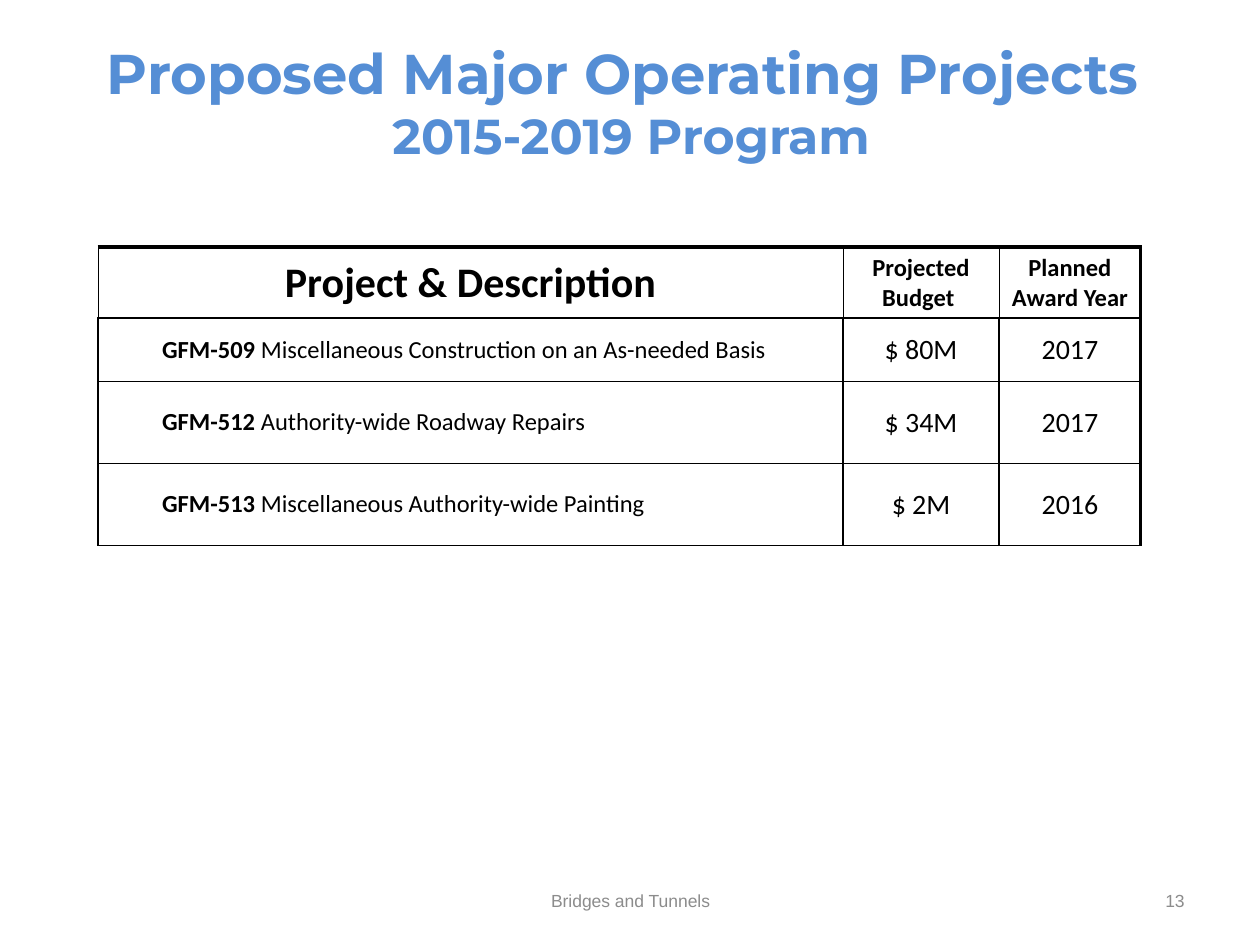
from lxml import etree
from pptx import Presentation
from pptx.dml.color import RGBColor
from pptx.enum.text import MSO_ANCHOR, MSO_AUTO_SIZE, PP_ALIGN
from pptx.oxml.ns import qn
from pptx.util import Emu, Pt

TOP, MIDDLE = MSO_ANCHOR.TOP, MSO_ANCHOR.MIDDLE
LEFT, CENTER, RIGHT = PP_ALIGN.LEFT, PP_ALIGN.CENTER, PP_ALIGN.RIGHT
GROW = MSO_AUTO_SIZE.SHAPE_TO_FIT_TEXT

BLUE = RGBColor(0x55, 0x8E, 0xD5)
BLACK = RGBColor(0x00, 0x00, 0x00)
GRAY = RGBColor(0x8C, 0x8C, 0x8C)

TITLE_LINES = [("Proposed Major Operating Projects ", 32), ("2015-2019 Program", 28)]
HEADERS = [("Project & Description", 24), ("Projected Budget ", 14), ("Planned Award Year", 14)]
PROJECTS = [
    ("GFM-509", " Miscellaneous Construction on an As-needed Basis", "$ 80M", "2017"),
    ("GFM-512", " Authority-wide Roadway Repairs", "$ 34M", "2017"),
    ("GFM-513", " Miscellaneous Authority-wide Painting", "$ 2M", "2016"),
]
COLUMN_WIDTHS = [745, 156, 142]
ROW_HEIGHTS = [71, 63, 82, 82]
DESCRIPTION_INDENT = 63


def px(length):
    """Turn pixels into EMU at 126 pixels to the inch."""
    return Emu(round(length * 914400 / 126))


def set_attributes(target, values):
    """Set every attribute named in a dict of format values."""
    for name, value in values.items():
        setattr(target, name, value)


def add_span(para, text, size, face, color, bold=False):
    """Add one formatted run to a paragraph."""
    span = para.add_run()
    span.text = text
    set_attributes(span.font, {"size": Pt(size), "name": face, "bold": bold})
    span.font.color.rgb = color


def build_title(page, left, top, width, height):
    """Fill the title placeholder with its two centred lines."""
    title = page.shapes.title
    set_attributes(title, {"left": px(left), "top": px(top),
                           "width": px(width), "height": px(height)})
    frame = title.text_frame
    set_attributes(frame, {"word_wrap": False, "auto_size": GROW, "vertical_anchor": TOP})
    for index, (text, size) in enumerate(TITLE_LINES):
        para = frame.add_paragraph() if index else frame.paragraphs[0]
        para.alignment = CENTER
        add_span(para, text, size, "Montserrat", BLUE, True)


def build_footer_text(page, left, top, width, height, text, alignment):
    """Add one small gray footer text."""
    box = page.shapes.add_textbox(px(left), px(top), px(width), px(height))
    set_attributes(box.text_frame, {"word_wrap": True, "vertical_anchor": MIDDLE})
    para = box.text_frame.paragraphs[0]
    para.alignment = alignment
    add_span(para, text, 10, "Arial", GRAY)


def set_borders(cell, row, column):
    """Draw the four borders of a cell by its place in the table."""
    side = 0.5 if row == 0 else 1
    widths = {
        "lnL": side,
        "lnR": 2 if column == len(COLUMN_WIDTHS) - 1 else side,
        "lnT": {0: 2, 1: 1}.get(row, 0.5),
        "lnB": 1 if row == 0 else 0.5,
    }
    properties = cell._tc.get_or_add_tcPr()
    for tag, width in widths.items():
        line = etree.SubElement(properties, qn(f"a:{tag}"), w=str(Pt(width)))
        fill = etree.SubElement(line, qn("a:solidFill"))
        etree.SubElement(fill, qn("a:srgbClr"), val=str(BLACK))


def fill_cell(cell, row, column, spans, alignment):
    """Format one cell and write its (text, size, bold) spans."""
    set_borders(cell, row, column)
    cell.fill.background()
    set_attributes(cell, {"vertical_anchor": MIDDLE, "margin_left": px(1), "margin_right": px(1),
                          "margin_top": px(1), "margin_bottom": 0})
    para = cell.text_frame.paragraphs[0]
    para.alignment = alignment
    if alignment == LEFT:
        para.level = 1
        properties = para._p.get_or_add_pPr()
        properties.set("marL", str(px(DESCRIPTION_INDENT)))
        properties.set("indent", "0")
    for text, size, bold in spans:
        add_span(para, text, size, "Calibri", BLACK, bold)


def build_project_table(page, left, top):
    """Add the table of projects, budgets and award years."""
    frame = page.shapes.add_table(len(ROW_HEIGHTS), len(COLUMN_WIDTHS), px(left), px(top),
                                  px(sum(COLUMN_WIDTHS)), px(sum(ROW_HEIGHTS)))
    table = frame.table
    set_attributes(table, {"first_row": False, "horz_banding": False})
    for column, width in zip(table.columns, COLUMN_WIDTHS):
        column.width = px(width)
    for row, height in zip(table.rows, ROW_HEIGHTS):
        row.height = px(height)
    for column, (text, size) in enumerate(HEADERS):
        fill_cell(table.cell(0, column), 0, column, [(text, size, True)], CENTER)
    for row, (code, description, budget, year) in enumerate(PROJECTS, 1):
        fill_cell(table.cell(row, 0), row, 0, [(code, 14, True), (description, 14, False)], LEFT)
        for column, text in enumerate((budget, year), 1):
            fill_cell(table.cell(row, column), row, column, [(text, 16, False)], CENTER)


def main():
    """Build the slide and save the deck."""
    deck = Presentation()
    set_attributes(deck, {"slide_width": px(1260), "slide_height": px(945)})
    page = deck.slides.add_slide(deck.slide_layouts[5])
    build_footer_text(page, 431, 876, 399, 50, "Bridges and Tunnels", CENTER)
    build_footer_text(page, 903, 876, 294, 50, "13", RIGHT)
    build_title(page, 67, 32, 1128, 140)
    build_project_table(page, 98, 247)
    deck.save("out.pptx")


if __name__ == "__main__":
    main()
